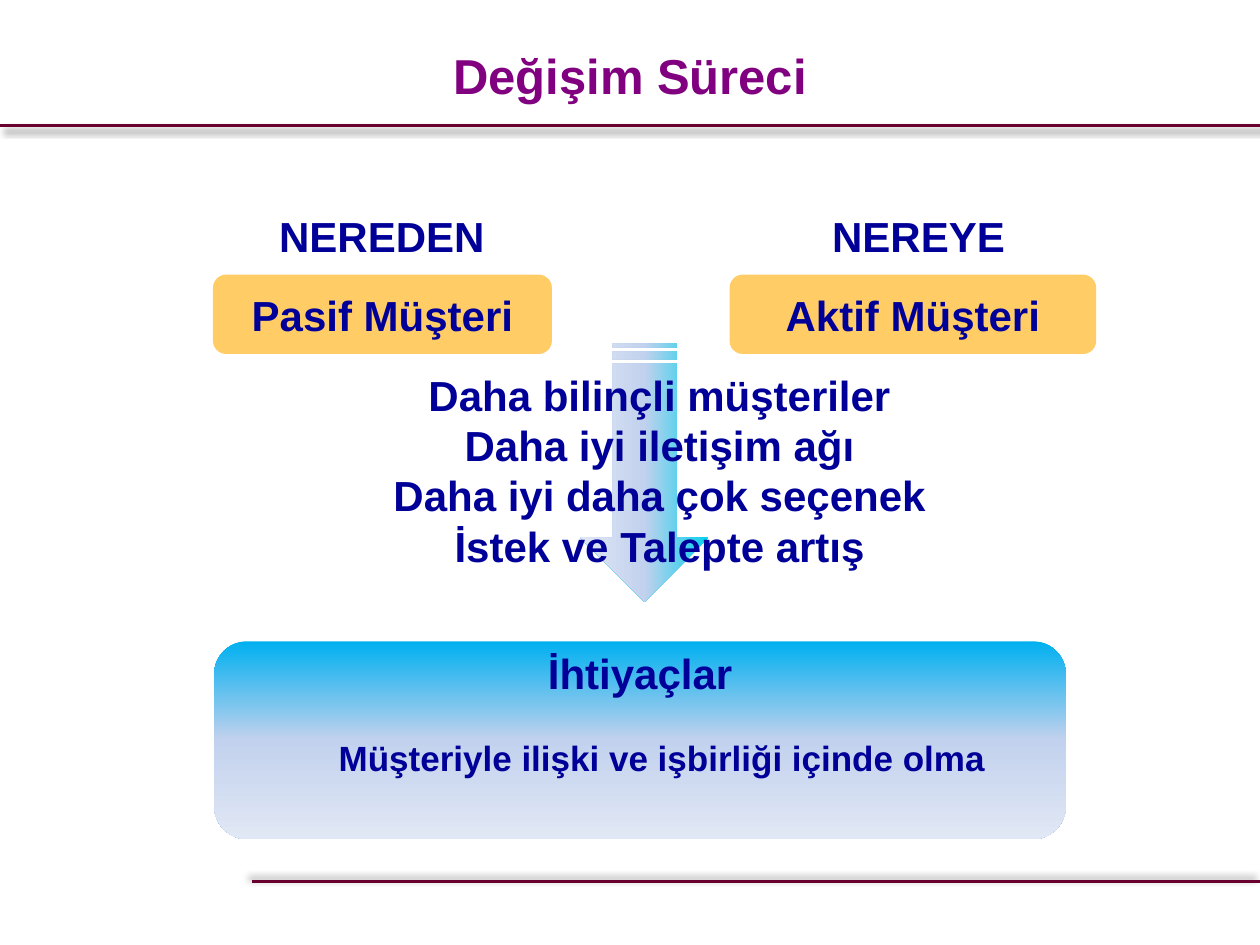
import pptx
import pptx.util
import pptx.dml.color
import pptx.enum.shapes
import pptx.enum.text
import pptx.oxml
from pptx.oxml.ns import nsdecls

SHAPE = pptx.enum.shapes.MSO_SHAPE
ANCHOR = pptx.enum.text.MSO_ANCHOR
Inches, Pt = pptx.util.Inches, pptx.util.Pt

# Content
TITLE = "Değişim Süreci"
# heading, heading (left, width), customer, box (left, width)
STAGES = [
    ("NEREDEN", (1.69, 2.68), "Pasif Müşteri", (1.69, 2.69)),
    ("NEREYE", (5.87, 2.84), "Aktif Müşteri", (5.79, 2.91)),
]
DRIVERS = [
    "Daha bilinçli müşteriler",
    "Daha iyi iletişim ağı",
    "Daha iyi daha çok seçenek",
    "İstek ve Talepte artış",
]
NEEDS_HEADING = "İhtiyaçlar"
NEEDS_TEXT = "Müşteriyle ilişki ve işbirliği içinde olma"

# Colours
NAVY, PURPLE, MAROON, AMBER = "000099", "800080", "6A002D", "FFCC66"
PALE_BLUES = ["C2D1ED", "E1E8F5"]

# Corner brackets: points and shadow direction in degrees
BRACKETS = [
    ([(9.8, 0.88), (0.12, 0.88), (0.12, 1.43)], 45),
    ([(1.67, 7.3), (9.8, 7.3), (9.8, 6.74)], 225),
]


def rgb(value):
    return pptx.dml.color.RGBColor.from_string(value)


def write(frame, lines, size, color=NAVY):
    for i, line in enumerate(lines):
        paragraph = frame.paragraphs[0] if i == 0 else frame.add_paragraph()
        paragraph.alignment = pptx.enum.text.PP_ALIGN.CENTER
        run = paragraph.add_run()
        run.text = line
        run.font.name, run.font.size, run.font.bold = "Arial", Pt(size), True
        run.font.color.rgb = rgb(color)


def add_text(slide, box, lines, size=24):
    frame = slide.shapes.add_textbox(*map(Inches, box)).text_frame
    frame.word_wrap = True
    frame.auto_size = pptx.enum.text.MSO_AUTO_SIZE.SHAPE_TO_FIT_TEXT
    write(frame, lines, size)


def add_block(slide, kind, box):
    block = slide.shapes.add_shape(kind, *map(Inches, box))
    block.shadow.inherit = False
    block.line.fill.background()
    return block


def fill_gradient(shape, colors):
    """Spread the colours evenly from the shape's top to its bottom."""
    step = 100000 // (len(colors) - 1)
    stops = "".join(
        f'<a:gs pos="{i * step}"><a:srgbClr val="{color}"/></a:gs>'
        for i, color in enumerate(colors))
    gradient = pptx.oxml.parse_xml(
        f'<a:gradFill {nsdecls("a")} rotWithShape="1"><a:gsLst>{stops}</a:gsLst>'
        '<a:lin ang="5400000" scaled="0"/></a:gradFill>')
    shape._element.spPr.find(pptx.oxml.ns.qn("a:prstGeom")).addnext(gradient)


def add_bracket(slide, points, direction):
    builder = slide.shapes.build_freeform(*points[0], scale=Inches(1))
    builder.add_line_segments(points[1:], close=False)
    bracket = builder.convert_to_shape()
    bracket.fill.background()
    bracket.line.color.rgb = rgb(MAROON)
    bracket.line.width = Pt(1.75)
    bracket._element.spPr.append(pptx.oxml.parse_xml(
        f'<a:effectLst {nsdecls("a")}><a:outerShdw blurRad="{Pt(4)}" '
        f'dist="{Pt(3)}" dir="{direction * 60000}" rotWithShape="0">'
        '<a:srgbClr val="000000"><a:alpha val="40000"/></a:srgbClr>'
        '</a:outerShdw></a:effectLst>'))


def main():
    deck = pptx.Presentation()
    deck.slide_width, deck.slide_height = Inches(10), Inches(7.5)
    slide = deck.slides.add_slide(deck.slide_layouts[5])

    # Frame
    for points, direction in BRACKETS:
        add_bracket(slide, points, direction)

    # Downward arrow
    arrow = add_block(slide, SHAPE.STRIPED_RIGHT_ARROW, (4.09, 3.24, 2.05, 1.02))
    arrow.rotation = 90
    fill_gradient(arrow, ["03D1ED"] + PALE_BLUES)

    # Needs panel
    panel = add_block(slide, SHAPE.ROUNDED_RECTANGLE, (1.7, 5.09, 6.76, 1.57))
    fill_gradient(panel, ["00B0F0"] + PALE_BLUES)
    add_text(slide, (1.22, 5.09, 7.72, 0.51), [NEEDS_HEADING])
    add_text(slide, (2.16, 5.8, 6.19, 0.43), [NEEDS_TEXT], 20)

    # Drivers of change
    add_text(slide, (2.87, 2.88, 4.73, 1.72), DRIVERS)

    # From and to
    for heading, (left, width), customer, (box_left, box_width) in STAGES:
        add_text(slide, (left, 1.62, width, 0.51), [heading])
        box = add_block(slide, SHAPE.ROUNDED_RECTANGLE,
                        (box_left, 2.18, box_width, 0.63))
        box.fill.solid()
        box.fill.fore_color.rgb = rgb(AMBER)
        box.text_frame.word_wrap = False
        box.text_frame.vertical_anchor = ANCHOR.MIDDLE
        write(box.text_frame, [customer], 24)

    # Title
    title = slide.shapes.title
    title.left, title.top = 0, Inches(0.22)
    title.width, title.height = deck.slide_width, Inches(0.61)
    title.text_frame.vertical_anchor = ANCHOR.TOP
    write(title.text_frame, [TITLE], 28, PURPLE)
    title.text_frame.paragraphs[0].line_spacing = 1.2

    deck.save("out.pptx")


if __name__ == "__main__":
    main()
